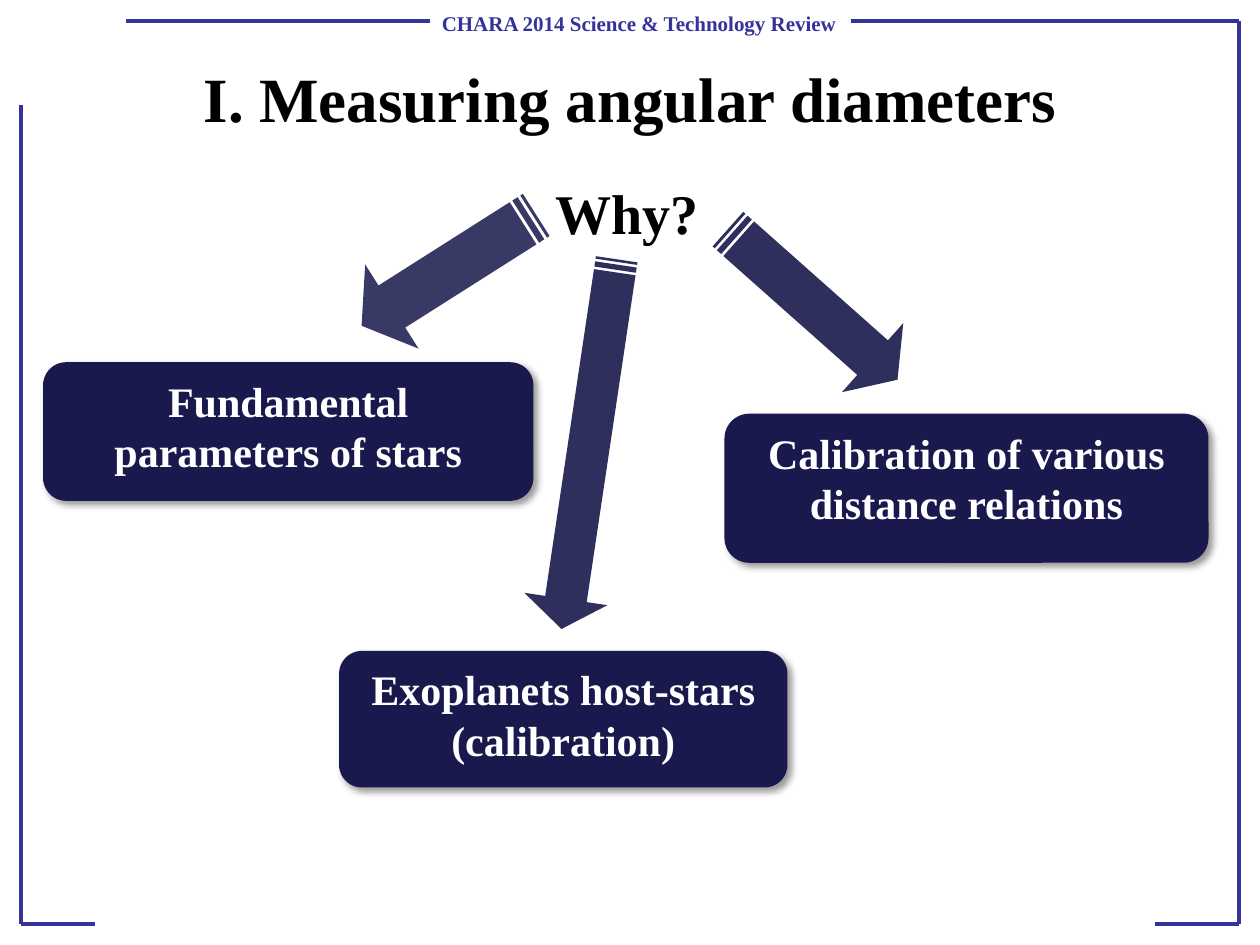
from dataclasses import dataclass

import lxml.etree
import pptx
import pptx.util
from pptx.dml.color import RGBColor
from pptx.enum.shapes import MSO_CONNECTOR, MSO_SHAPE
from pptx.enum.text import MSO_ANCHOR, MSO_AUTO_SIZE, PP_ALIGN
from pptx.oxml import parse_xml
from pptx.oxml.ns import nsdecls, qn

# The slide is a grid of 120 columns and 90 rows, twelve to the inch
COLS, ROWS = 120, 90
CELL = pptx.util.Inches(1) // 12

FONT = "Times New Roman"
BLUE = RGBColor(0x33, 0x33, 0x99)
NAVY = RGBColor(0x19, 0x19, 0x4D)
BLACK = RGBColor(0, 0, 0)
WHITE = RGBColor(0xFF, 0xFF, 0xFF)

SHADOW = (
    f'<a:effectLst {nsdecls("a")}><a:outerShdw blurRad="50800" dist="38100" '
    'dir="2700000" algn="tl" rotWithShape="0"><a:srgbClr val="000000">'
    '<a:alpha val="40000"/></a:srgbClr></a:outerShdw></a:effectLst>'
)


@dataclass
class Area:
    col: float
    row: float
    cols: float
    rows: float

    def emu(self) -> list[int]:
        return [grid(n) for n in (self.col, self.row, self.cols, self.rows)]


@dataclass
class Label:
    area: Area
    lines: list[str]
    size: int
    color: RGBColor
    align: PP_ALIGN = PP_ALIGN.LEFT
    anchor: MSO_ANCHOR = MSO_ANCHOR.TOP
    wrap: bool = False


@dataclass
class Box:
    area: Area
    lines: list[str]


@dataclass
class Arrow:
    area: Area
    angle: float
    opacity: int


# Each frame line: from column, row to column, row
FRAME = [
    (2, 10, 2, 88),
    (2, 88, 9, 88),
    (81, 2, 118, 2),
    (118, 2, 118, 88),
    (12, 2, 41, 2),
    (110, 88, 118, 88),
]
LABELS = [
    Label(Area(40.9, 0.4, 41, 3.6), ["CHARA 2014 Science & Technology Review"], 12, BLUE),
    Label(Area(0, 3, COLS, 12.5), ["I. Measuring angular diameters"], 36, BLACK,
          PP_ALIGN.CENTER, MSO_ANCHOR.MIDDLE, True),
    Label(Area(51.7, 16.4, 16.2, 7.7), ["Why?"], 32, BLACK),
]
BOXES = [
    Box(Area(4.1, 34.5, 46.7, 13.2), ["Fundamental parameters of stars"]),
    Box(Area(69, 39.4, 46.1, 14.2), ["Calibration of various", "distance relations"]),
    Box(Area(32.3, 62, 42.7, 13), ["Exoplanets host-stars", "(calibration)"]),
]
ARROWS = [
    Arrow(Area(32.9, 21, 19.7, 9.5), 147.6, 86),
    Arrow(Area(38.3, 38.3, 35.6, 8), 98.5, 90),
    Arrow(Area(66.6, 24.6, 21.6, 8.8), 41.6, 90),
]


def grid(n: float) -> int:
    return round(n * CELL)


def write(tf, lines: list[str], size: int, color: RGBColor, align: PP_ALIGN) -> None:
    font = {"name": FONT, "size": pptx.util.Pt(size), "bold": True}
    for i, line in enumerate(lines):
        p = tf.paragraphs[0] if i == 0 else tf.add_paragraph()
        p.alignment = align
        r = p.add_run()
        r.text = line
        for key, value in font.items():
            setattr(r.font, key, value)
        r.font.color.rgb = color


def draw_frame_line(s, ends: tuple[int, int, int, int]) -> None:
    ln = s.shapes.add_connector(MSO_CONNECTOR.STRAIGHT, *(grid(n) for n in ends))
    ln.line.color.rgb = BLUE
    ln.line.width = pptx.util.Pt(2.25)
    lxml.etree.SubElement(ln._element.spPr, qn("a:effectLst"))


def draw_label(s, label: Label) -> None:
    tf = s.shapes.add_textbox(*label.area.emu()).text_frame
    fit = MSO_AUTO_SIZE.NONE if label.wrap else MSO_AUTO_SIZE.SHAPE_TO_FIT_TEXT
    layout = {"word_wrap": label.wrap, "vertical_anchor": label.anchor, "auto_size": fit}
    for key, value in layout.items():
        setattr(tf, key, value)
    write(tf, label.lines, label.size, label.color, label.align)


def draw_solid(s, kind: MSO_SHAPE, area: Area):
    sp = s.shapes.add_shape(kind, *area.emu())
    sp.shadow.inherit = False
    sp.fill.solid()
    sp.fill.fore_color.rgb = NAVY
    sp.line.fill.background()
    return sp


def draw_box(s, box: Box) -> None:
    sp = draw_solid(s, MSO_SHAPE.ROUNDED_RECTANGLE, box.area)
    spPr = sp._element.spPr
    spPr.replace(spPr.find(qn("a:effectLst")), parse_xml(SHADOW))
    tf = sp.text_frame
    tf.word_wrap = True
    tf.vertical_anchor = MSO_ANCHOR.TOP
    write(tf, box.lines, 24, WHITE, PP_ALIGN.CENTER)


def draw_arrow(s, arrow: Arrow) -> None:
    sp = draw_solid(s, MSO_SHAPE.STRIPED_RIGHT_ARROW, arrow.area)
    sp.rotation = arrow.angle
    sp.adjustments[0], sp.adjustments[1] = 0.5, 0.36
    clr = sp._element.spPr.find(qn("a:solidFill"))[0]
    lxml.etree.SubElement(clr, qn("a:alpha"), val=str(arrow.opacity * 1000))


def main() -> None:
    prs = pptx.Presentation()
    prs.slide_width, prs.slide_height = grid(COLS), grid(ROWS)
    s = prs.slides.add_slide(prs.slide_layouts[6])
    # Border, then header, title and question
    for ends in FRAME:
        draw_frame_line(s, ends)
    for label in LABELS:
        draw_label(s, label)
    # Answers and the arrows that lead to them
    for box in BOXES:
        draw_box(s, box)
    for arrow in ARROWS:
        draw_arrow(s, arrow)
    prs.save("out.pptx")


if __name__ == "__main__":
    main()
